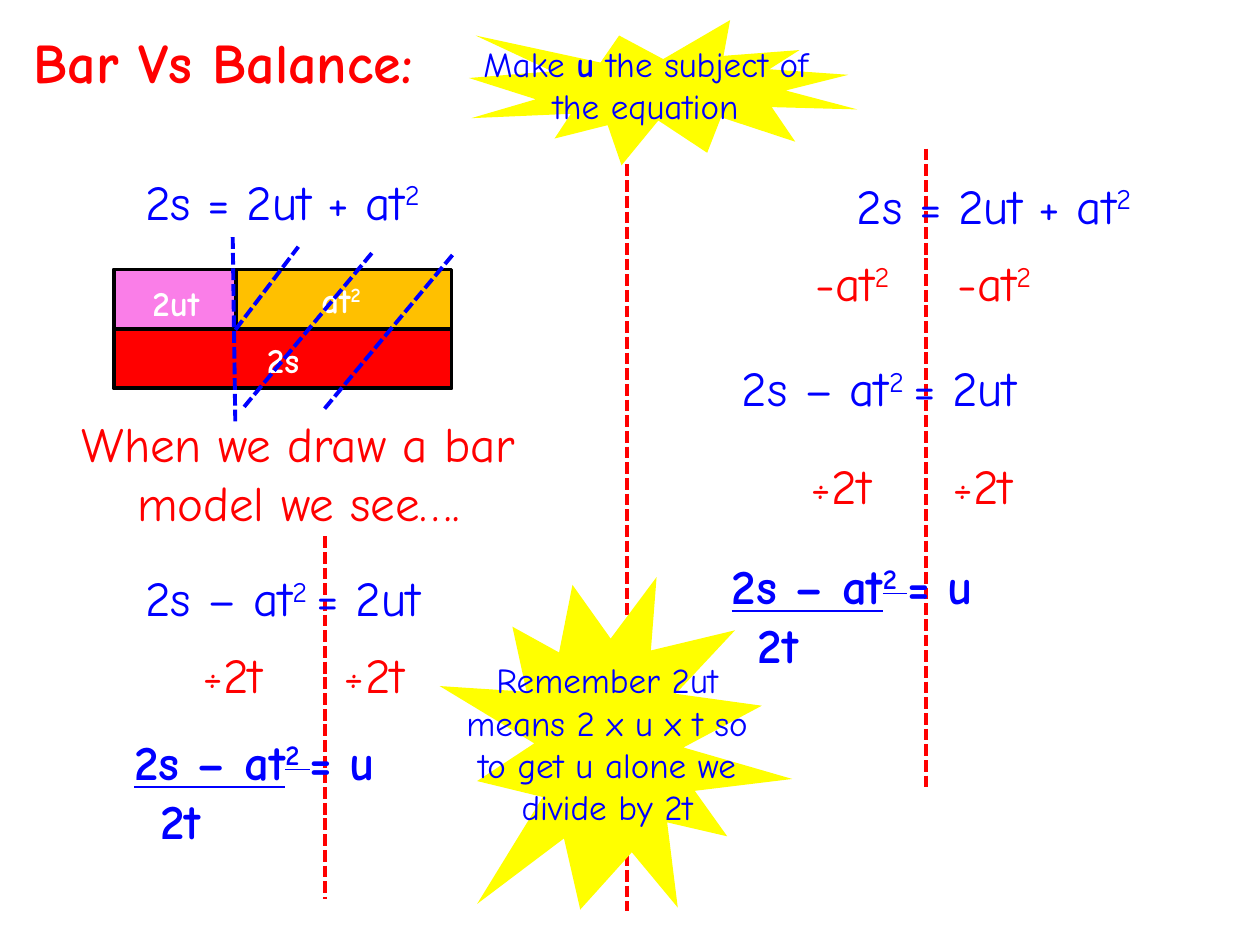
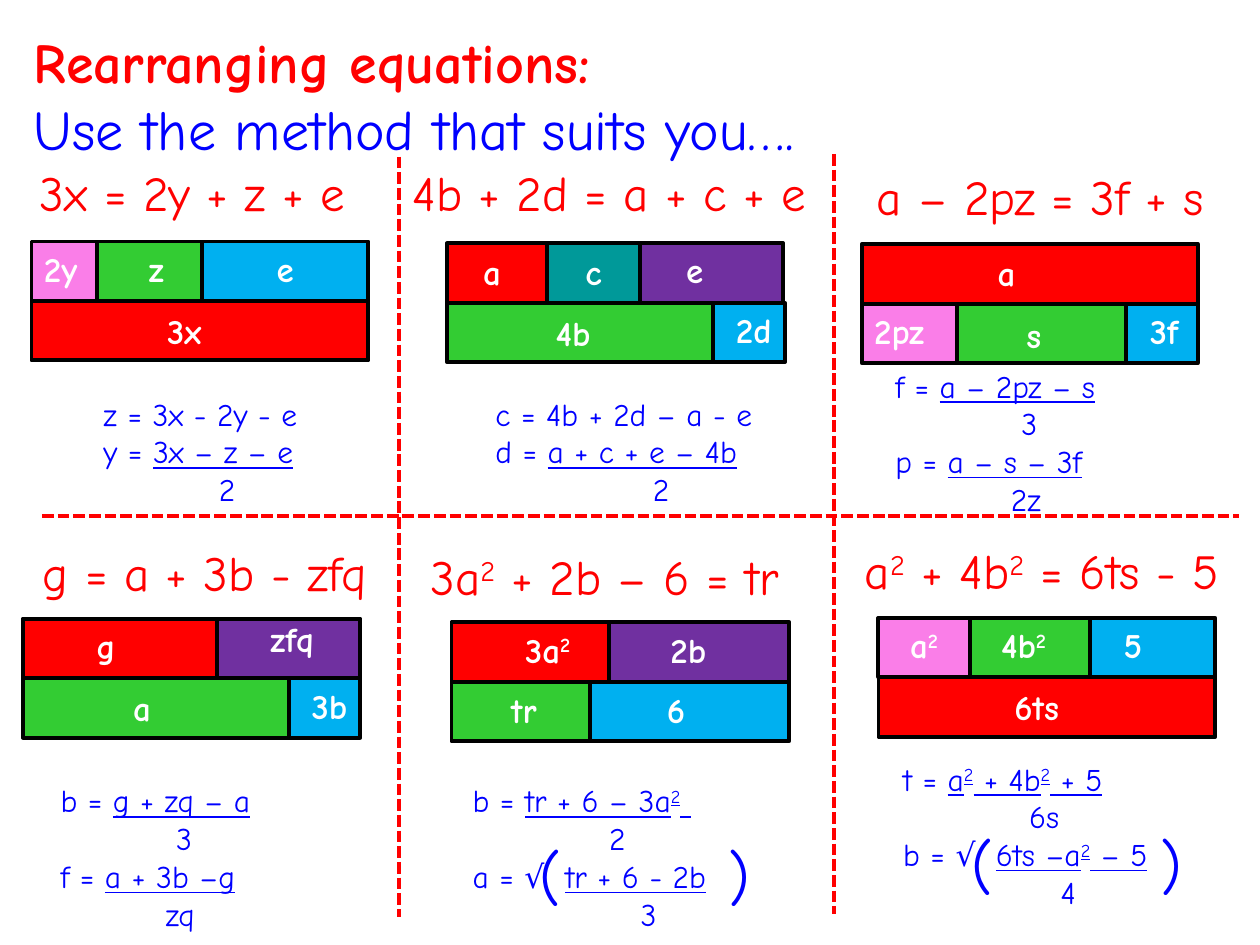
from lxml import etree
from pptx import Presentation
from pptx.dml.color import RGBColor
from pptx.enum import dml, shapes, text
from pptx.oxml import ns
from pptx.util import Pt

RED, BLUE, YELLOW = "FF0000", "0000FF", "FFFF00"
PINK, GREEN, SKY = "FA7EE8", "33CC33", "00B0F0"
PURPLE, TEAL, GOLD = "7030A0", "009999", "FFC000"
BLACK, WHITE = "000000", "FFFFFF"
MARKS = {"*": "bold", "_": "under", "^": "sup", "#": "blue"}


def color(code):
    return RGBColor.from_string(code)


def assign(item, values):
    for name, value in values.items():
        setattr(item, name, value)


class Deck:
    font = "Comic Neue"
    row = 34

    def __init__(self):
        self.prs = Presentation()
        assign(self.prs, {"slide_width": Pt(720), "slide_height": Pt(540)})

    def page(self):
        self.slide = self.prs.slides.add_slide(self.prs.slide_layouts[6])

    def piece(self, para, words, size, ink, on):
        run = para.add_run()
        run.text = words
        assign(run.font, {"name": self.font, "size": Pt(size),
                          "bold": "bold" in on, "underline": "under" in on})
        run.font.color.rgb = color(BLUE if "blue" in on else ink)
        if "sup" in on:
            run.font._element.set("baseline", "30000")

    def line(self, para, words, size, ink):
        on, part = set(), ""
        for char in words:
            if char in MARKS:
                if part:
                    self.piece(para, part, size, ink, on)
                on ^= {MARKS[char]}
                part = ""
            else:
                part += char
        if part:
            self.piece(para, part, size, ink, on)

    def label(self, x, y, w, h, lines, size=28, ink=BLUE, mid=False, tab=0):
        box = self.slide.shapes.add_textbox(Pt(x), Pt(y), Pt(w), Pt(h))
        frame = box.text_frame
        assign(frame, {"word_wrap": True,
                       "auto_size": text.MSO_AUTO_SIZE.SHAPE_TO_FIT_TEXT})
        for i, item in enumerate(lines):
            indent, words = item if isinstance(item, tuple) else (0, item)
            para = frame.add_paragraph() if i else frame.paragraphs[0]
            if mid and not indent:
                para.alignment = text.PP_ALIGN.CENTER
            props = para._p.get_or_add_pPr()
            if indent:
                props.set("marL", str(Pt(indent)))
                props.set("indent", "0")
            if "\t" in words:
                stops = etree.SubElement(props, ns.qn("a:tabLst"))
                etree.SubElement(stops, ns.qn("a:tab"), pos=str(Pt(tab)), algn="l")
            self.line(para, words, size, ink)

    def title(self, *lines):
        self.label(12, 12, 708, 46 * len(lines), lines, 32, RED)

    def shape(self, kind, x, y, w, h, fill, edge=None, turn=0):
        item = self.slide.shapes.add_shape(kind, Pt(x), Pt(y), Pt(w), Pt(h))
        item.shadow.inherit = False
        item.rotation = turn
        item.fill.solid()
        item.fill.fore_color.rgb = color(fill)
        if edge:
            item.line.color.rgb = color(edge)
            item.line.width = Pt(2.25)
        else:
            item.line.fill.background()

    def burst(self, x, y, w, h, turn=0):
        self.shape(shapes.MSO_SHAPE.EXPLOSION1, x, y, w, h, YELLOW, turn=turn)

    def dash(self, x1, y1, x2, y2, ink=RED):
        item = self.slide.shapes.add_connector(
            shapes.MSO_CONNECTOR.STRAIGHT, Pt(x1), Pt(y1), Pt(x2), Pt(y2))
        item.line.color.rgb = color(ink)
        assign(item.line, {"width": Pt(2.25),
                           "dash_style": dml.MSO_LINE.SQUARE_DOT})
        etree.SubElement(item._element.spPr, ns.qn("a:effectLst"))

    def model(self, x, y, *rows):
        labels = []
        for i, row in enumerate(rows):
            left, top = x, y + i * self.row
            for w, fill, word, dx, dy in row:
                self.shape(shapes.MSO_SHAPE.RECTANGLE, left, top, w, self.row,
                           fill, BLACK)
                labels.append((x + dx, top + dy, word))
                left += w
        for left, top, word in labels:
            self.label(left, top, 55, 32, [f"*{word}"], 20, WHITE)

    def pair(self, x, y, words, size=28, ink=RED, gap=81):
        for i in range(2):
            self.label(x + i * gap, y, 75, 41, [words[i % len(words)]], size, ink)


def compare(deck):
    deck.page()
    deck.title("*Bar Vs Balance:")
    deck.model(65, 154,
               [(70, PINK, "2ut", 15, 3.5), (123, GOLD, "at^2", 111.5, 1.5)],
               [(193, RED, "2s", 80.5, 2)])
    deck.dash(358.5, 94, 358.5, 520.5)
    deck.burst(268, 11.5, 222, 83)
    deck.label(267, 21, 204, 55, ["Make *u* the subject of the equation"], 20, mid=True)
    deck.label(31.5, 233, 278, 75, ["When we draw a bar model we see…."], ink=RED, mid=True)
    deck.dash(529, 85, 529, 452)
    deck.dash(185.5, 306.5, 185.5, 513.5)
    deck.burst(257, 324, 190, 201.5, 270)
    deck.label(255.5, 373, 183, 104,
               ["Remember 2ut means 2 x u x t so to get u alone we divide by 2t"],
               20, mid=True)

    for x, y in (50.5, 94.5), (457, 96.5):
        deck.label(x, y, 222, 41, ["2s = 2ut + at^2"], mid=True)
    for x, y in (50.5, 321), (391.5, 201):
        deck.label(x, y, 222, 41, ["2s – at^2 ^= 2ut"], mid=True)
    for x, y in (34.5, 414.5), (376, 314):
        deck.label(x, y, 222, 75, ["*_2s – at^2 ^_= u", (50, "*2t")], mid=True)
    deck.pair(459, 141, ["-at^2"])
    deck.pair(456, 256.5, ["÷2t"])
    deck.pair(108.5, 364.5, ["÷2t"])

    for ends in ((133, 135.5, 134.5, 242.5), (134.5, 188.5, 170.5, 141),
                 (185.5, 233.5, 260, 144), (139.5, 232.5, 213, 144)):
        deck.dash(*ends, BLUE)


def practise(deck):
    deck.page()
    deck.title("*Rearranging equations:", "#Use the method that suits you….")
    deck.dash(228, 89.5, 228, 524)
    deck.dash(476.5, 88, 476.5, 522.5)
    deck.dash(24, 295, 708, 295)

    for x, y, w, words in (
            (3, 89.5, 214, "3x = 2y + z + e"),
            (219, 89.5, 258, "4b + 2d = a + c + e"),
            (477.5, 91.5, 234, "a – 2pz = 3f + s"),
            (0, 306.5, 234, "g = a + 3b - zfq"),
            (216.5, 309, 258, "3a^2^ + 2b – 6 = tr"),
            (466.5, 305.5, 258, "a^2^ + 4b^2^ = 6ts - 5")):
        deck.label(x, y, w, 41, [words], ink=RED, mid=True)

    deck.model(18, 138,
               [(37.5, PINK, "2y", 0, 0), (60, GREEN, "z", 60, 0), (95, SKY, "e", 133, 0)],
               [(192.5, RED, "3x", 70.5, 1.5)])
    deck.model(255.5, 139,
               [(57, RED, "a", 13.5, 0.5), (53, TEAL, "c", 72, 0.5),
                (82, PURPLE, "e", 129.5, -0.5)],
               [(152, GREEN, "4b", 55, 1.5), (41, SKY, "2d", 158, 0)])
    deck.model(492.5, 139.5,
               [(192, RED, "a", 70.5, 0.5)],
               [(54.5, PINK, "2pz", 0, 0), (96.5, GREEN, "s", 87, 2),
                (41, SKY, "3f", 157.5, 0)])
    deck.model(13, 353.5,
               [(111, RED, "g", 35, 0), (82, PURPLE, "zfq", 134.5, -4)],
               [(152, GREEN, "a", 56, 1), (41, SKY, "3b", 158, 0)])
    deck.model(258, 355.5,
               [(90, RED, "3a^2", 35, 0), (103, PURPLE, "2b", 118, 0)],
               [(79, GREEN, "tr", 27, 0.5), (114, SKY, "6", 116, 0.5)])
    deck.model(502, 353,
               [(52.5, PINK, "a^2", 11, 0), (68.5, GREEN, "4b^2", 63, 0),
                (71.5, SKY, "5", 133, 0)],
               [(192.5, RED, "6ts", 70.5, 1)])

    for x, y, lines in (
            (52, 222, ["z = 3x - 2y - e", "y = _3x – z – e", (66, "2")]),
            (276, 222, ["c = 4b + 2d – a - e", "d = _a + c + e – 4b", (90, "2")]),
            (504.5, 206, ["f = _a – 2pz – s", (72, "3"),
                          "p = _a – s – 3f", (66, "2z")]),
            (27.5, 443, ["b = _g + zq – a", (66, "3"),
                         "f = _a + 3b –g", (60, "zq")]),
            (263, 443, ["b = _tr + 6 – 3a^2^ ", (78, "2"),
                        "a = √\t_tr + 6 - 2b", (96, "3")]),
            (509, 430.5, ["t = _a^2^ + 4b^2^ + 5", (72, "6s"),
                          "b = √\t_6ts –a^2^ – 5", (90, "4")])):
        deck.label(x, y, 173, 24 * len(lines), lines, 18, tab=53)
    for x, y in (301, 474.5), (548, 468):
        deck.pair(x, y, "()", 36, BLUE, 108)


def main():
    deck = Deck()
    compare(deck)
    practise(deck)
    deck.prs.save("out.pptx")


if __name__ == "__main__":
    main()
